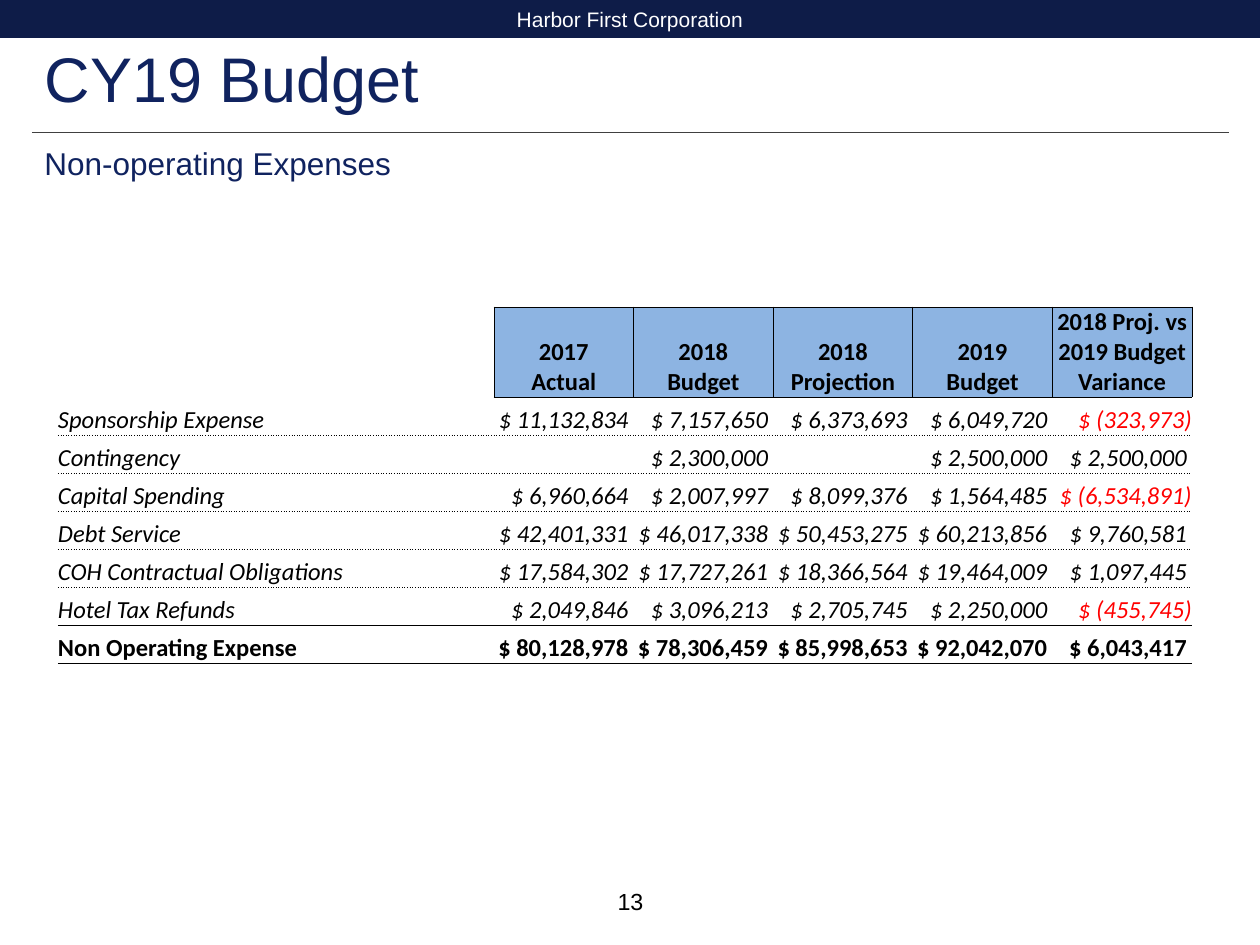
import pptx
import pptx.util
import pptx.dml.color
import pptx.enum.shapes
import pptx.enum.text
import pptx.oxml.ns
from lxml import etree

ORGANIZATION = "Harbor First Corporation"
TITLE = "CY19 Budget"
SUBTITLE = "Non-operating Expenses"
PAGE_NUMBER = "13"
HEADINGS = ["", "2017\nActual", "2018\nBudget", "2018\nProjection", "2019\nBudget",
            "2018 Proj. vs 2019 Budget Variance"]
EXPENSES = [
    ("Sponsorship Expense", 11132834, 7157650, 6373693, 6049720, -323973),
    ("Contingency", None, 2300000, None, 2500000, 2500000),
    ("Capital Spending", 6960664, 2007997, 8099376, 1564485, -6534891),
    ("Debt Service", 42401331, 46017338, 50453275, 60213856, 9760581),
    ("COH Contractual Obligations", 17584302, 17727261, 18366564, 19464009, 1097445),
    ("Hotel Tax Refunds", 2049846, 3096213, 2705745, 2250000, -455745),
    ("Non Operating Expense", 80128978, 78306459, 85998653, 92042070, 6043417),
]
NAVY, BANNER, HEADING_BLUE = "10235F", "0E1C48", "8DB4E2"
BLACK, WHITE, RED, GRAY = "000000", "FFFFFF", "FF0000", "404040"
LEFT, CENTER, RIGHT = (pptx.enum.text.PP_ALIGN.LEFT, pptx.enum.text.PP_ALIGN.CENTER,
                       pptx.enum.text.PP_ALIGN.RIGHT)
TOP, MIDDLE, BOTTOM = (pptx.enum.text.MSO_ANCHOR.TOP, pptx.enum.text.MSO_ANCHOR.MIDDLE,
                       pptx.enum.text.MSO_ANCHOR.BOTTOM)
TABLE_WIDTH, LABEL_WIDTH = 1134, 436
HEADING_HEIGHT, EXPENSE_HEIGHT = 90, 38


def px(length):
    return pptx.util.Emu(round(length * 914400 / 126))


def color(hex_code):
    return pptx.dml.color.RGBColor.from_string(hex_code)


def place(shape, left, top, width, height):
    shape.left, shape.top, shape.width, shape.height = map(px, (left, top, width, height))


def write(frame, text, size, hex_code, align=LEFT, face="Arial", bold=False, italic=False):
    frame.text = text
    for paragraph in frame.paragraphs:
        paragraph.alignment = align
        font = paragraph.font
        font.name, font.size = face, pptx.util.Pt(size)
        font.bold, font.italic = bold, italic
        font.color.rgb = color(hex_code)


def add_text(text, box, size, hex_code, align=LEFT, anchor=TOP):
    frame = slide.shapes.add_textbox(*map(px, box)).text_frame
    frame.word_wrap = True
    frame.vertical_anchor = anchor
    write(frame, text, size, hex_code, align)


def set_borders(cell, **dashes):
    properties = cell._tc.get_or_add_tcPr()
    for side in "LRTB":
        border = etree.SubElement(properties, pptx.oxml.ns.qn(f"a:ln{side}"), w="6350")
        dash = dashes.get(side)
        if dash is None:
            etree.SubElement(border, pptx.oxml.ns.qn("a:noFill"))
            continue
        fill = etree.SubElement(border, pptx.oxml.ns.qn("a:solidFill"))
        etree.SubElement(fill, pptx.oxml.ns.qn("a:srgbClr"), val=BLACK)
        etree.SubElement(border, pptx.oxml.ns.qn("a:prstDash"), val=dash)


def prepare(cell):
    cell.margin_left = cell.margin_right = cell.margin_top = cell.margin_bottom = 0
    cell.vertical_anchor = BOTTOM


def money(amount):
    if amount is None:
        return ""
    return f"$ ({-amount:,})" if amount < 0 else f"$ {amount:,}"


deck = pptx.Presentation()
deck.slide_width, deck.slide_height = px(1260), px(945)
slide = deck.slides.add_slide(deck.slide_layouts[5])

budget = slide.shapes.add_table(
    len(EXPENSES) + 1, len(HEADINGS), px(58), px(307), px(TABLE_WIDTH),
    px(HEADING_HEIGHT + EXPENSE_HEIGHT * len(EXPENSES))).table
budget.first_row = budget.horz_banding = False
for index, column in enumerate(budget.columns):
    column.width = px((TABLE_WIDTH - LABEL_WIDTH) / (len(HEADINGS) - 1) if index else LABEL_WIDTH)
for index, row in enumerate(budget.rows):
    row.height = px(EXPENSE_HEIGHT if index else HEADING_HEIGHT)

for index, heading in enumerate(HEADINGS):
    cell = budget.cell(0, index)
    prepare(cell)
    write(cell.text_frame, heading, 14, BLACK, CENTER, "Calibri", bold=True)
    if heading:
        set_borders(cell, L="solid", R="solid", T="solid", B="solid")
        cell.fill.solid()
        cell.fill.fore_color.rgb = color(HEADING_BLUE)
    else:
        set_borders(cell, R="solid")
        cell.fill.background()

last = len(EXPENSES)
for number, (label, *amounts) in enumerate(EXPENSES, 1):
    total = number == last
    for index, value in enumerate([label, *amounts]):
        cell = budget.cell(number, index)
        prepare(cell)
        negative = index > 0 and value is not None and value < 0
        if index and not negative:
            cell.margin_right = px(5)
        write(cell.text_frame, money(value) if index else label, 14, RED if negative else BLACK,
              RIGHT if index else LEFT, "Calibri", bold=total, italic=not total)
        above = "solid" if total or (number == 1 and index) else "sysDot"
        if number == 1 and not index:
            above = None
        set_borders(cell, T=above, B="solid" if number >= last - 1 else "sysDot")
        cell.fill.background()

add_text(PAGE_NUMBER, (489, 876, 283, 50), 13.3, BLACK, CENTER, MIDDLE)

banner = slide.shapes.add_shape(pptx.enum.shapes.MSO_SHAPE.RECTANGLE,
                                *map(px, (0, 0, 1260, 38)))
banner.shadow.inherit = False
banner.fill.solid()
banner.fill.fore_color.rgb = color(BANNER)
banner.line.fill.background()
banner.text_frame.margin_left = banner.text_frame.margin_right = 0
banner.text_frame.vertical_anchor = MIDDLE
write(banner.text_frame, ORGANIZATION, 12, WHITE, CENTER)

title = slide.shapes.title
place(title, 32, 33, 403, 89)
title.text_frame.word_wrap = False
title.text_frame.vertical_anchor = TOP
write(title.text_frame, TITLE, 36, NAVY)

rule = slide.shapes.add_connector(pptx.enum.shapes.MSO_CONNECTOR.STRAIGHT,
                                  *map(px, (32, 132, 1229, 132)))
rule.line.color.rgb = color(GRAY)
rule.line.width = pptx.util.Pt(0.5)
etree.SubElement(rule._element.spPr, pptx.oxml.ns.qn("a:effectLst"))

add_text(SUBTITLE, (32, 138, 1193, 45), 18, NAVY)

deck.save("out.pptx")
